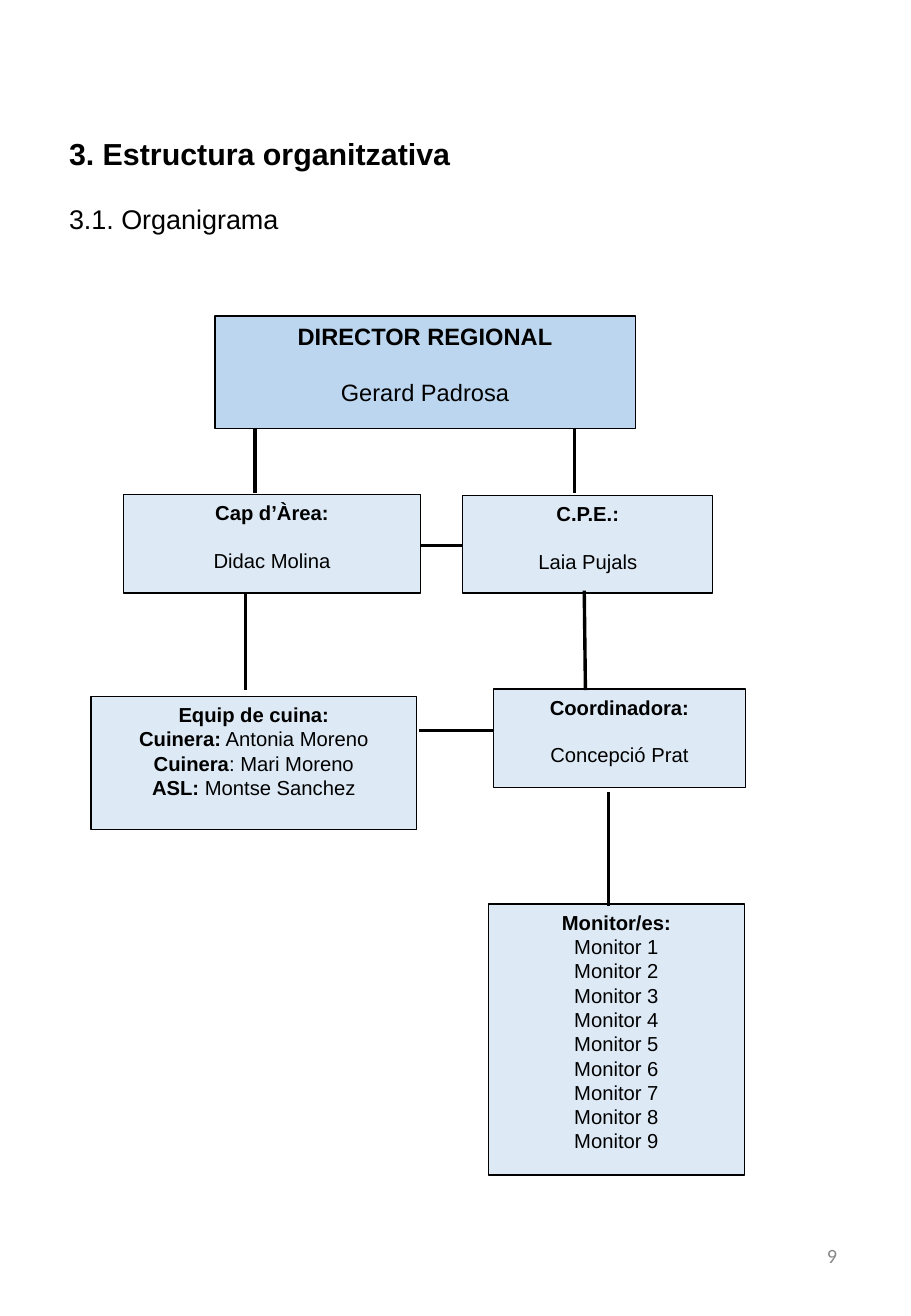
from dataclasses import dataclass

import lxml.etree
import pptx
import pptx.dml.color
import pptx.enum.shapes
import pptx.enum.text
import pptx.oxml.ns
import pptx.shapes.base
import pptx.slide
import pptx.text.text
import pptx.util

Inches = pptx.util.Inches
Align = pptx.enum.text.PP_ALIGN
Anchor = pptx.enum.text.MSO_ANCHOR


@dataclass(frozen=True)
class Theme:
    ink: str = "000000"
    page_number: str = "888888"
    director_fill: str = "BBD6EE"
    role_fill: str = "DDEAF6"
    font: str = "Arial"
    number_font: str = "Calibri"
    heading_size: int = 18
    subheading_size: int = 16
    director_size: int = 14
    role_size: int = 12
    border: float = 0.75
    link: float = 2
    line_height: float = 1.15


THEME = Theme()


@dataclass(frozen=True)
class Line:
    """A paragraph: a bold part, then a regular part."""
    bold: str = ""
    regular: str = ""
    size: int = THEME.role_size
    gap: float = 0
    font: str = THEME.font
    color: str = THEME.ink


@dataclass(frozen=True)
class Area:
    left: float
    top: float
    width: float
    height: float

    def lengths(self) -> tuple[pptx.util.Length, ...]:
        return tuple(map(Inches, (self.left, self.top, self.width, self.height)))


@dataclass(frozen=True)
class Box:
    area: Area
    lines: tuple[Line, ...]
    fill: str = THEME.role_fill


@dataclass(frozen=True)
class Link:
    start: tuple[float, float]
    end: tuple[float, float]
    width: float = THEME.link


def person(role: str, name: str, size: int = THEME.role_size) -> tuple[Line, ...]:
    """A role in bold and, one empty line below, the name."""
    return Line(role, size=size), Line(regular=name, size=size, gap=size * THEME.line_height)


BOXES = (
    Box(Area(1.77, 2.6, 3.46, 0.93),
        person("DIRECTOR REGIONAL", "Gerard Padrosa", THEME.director_size), THEME.director_fill),
    Box(Area(1.02, 4.07, 2.44, 0.81), person("Cap d’Àrea:", "Didac Molina")),
    Box(Area(3.81, 4.08, 2.06, 0.8), person("C.P.E.:", "Laia Pujals")),
    Box(Area(0.75, 5.73, 2.68, 1.1), (
        Line("Equip de cuina:"),
        Line("Cuinera:", " Antonia Moreno"),
        Line("Cuinera", ": Mari Moreno"),
        Line("ASL: ", "Montse Sanchez"),
    )),
    Box(Area(4.06, 5.67, 2.08, 0.81), person("Coordinadora:", "Concepció Prat")),
    Box(Area(4.02, 7.44, 2.11, 2.23), (
        Line("Monitor/es:"),
        *(Line(regular=f"Monitor {number}") for number in range(1, 10)),
    )),
)

LINKS = (
    Link((2.1, 3.53), (2.1, 4.06)),
    Link((4.73, 3.53), (4.73, 4.06)),
    Link((3.46, 4.49), (3.81, 4.49), 1.75),
    Link((2.02, 4.88), (2.02, 5.68)),
    Link((4.81, 4.86), (4.82, 5.68)),
    Link((3.45, 6.01), (4.06, 6.01)),
    Link((5.01, 6.52), (5.01, 7.46)),
)

HEADING = (
    Line("3. Estructura organitzativa", size=THEME.heading_size),
    Line(regular="3.1. Organigrama", size=THEME.subheading_size,
         gap=THEME.subheading_size * THEME.line_height),
)
PAGE_NUMBER = (Line(regular="9", font=THEME.number_font, color=THEME.page_number),)


def rgb(color: str) -> pptx.dml.color.RGBColor:
    return pptx.dml.color.RGBColor.from_string(color)


def write_lines(frame: pptx.text.text.TextFrame, lines: tuple[Line, ...],
                alignment: Align, anchor: Anchor = Anchor.TOP) -> None:
    frame.word_wrap = True
    frame.vertical_anchor = anchor
    for index, line in enumerate(lines):
        paragraph = frame.add_paragraph() if index else frame.paragraphs[0]
        paragraph.alignment = alignment
        if line.gap:
            paragraph.space_before = pptx.util.Pt(line.gap)
        paragraph.font.name = line.font
        paragraph.font.size = pptx.util.Pt(line.size)
        paragraph.font.color.rgb = rgb(line.color)
        mixed = bool(line.bold and line.regular)
        if not mixed:
            paragraph.font.bold = bool(line.bold)
        for text, bold in ((line.bold, True), (line.regular, False)):
            if text:
                run = paragraph.add_run()
                run.text = text
                if mixed:
                    run.font.bold = bold


def add_text(slide: pptx.slide.Slide, area: Area, lines: tuple[Line, ...],
             alignment: Align, anchor: Anchor = Anchor.TOP) -> None:
    shape = slide.shapes.add_textbox(*area.lengths())
    write_lines(shape.text_frame, lines, alignment, anchor)


def add_box(slide: pptx.slide.Slide, box: Box) -> None:
    shape = slide.shapes.add_shape(
        pptx.enum.shapes.MSO_SHAPE.RECTANGLE, *box.area.lengths())
    shape.shadow.inherit = False
    shape.fill.solid()
    shape.fill.fore_color.rgb = rgb(box.fill)
    shape.line.color.rgb = rgb(THEME.ink)
    shape.line.width = pptx.util.Pt(THEME.border)
    write_lines(shape.text_frame, box.lines, Align.CENTER)


def add_link(slide: pptx.slide.Slide, link: Link) -> None:
    connector = slide.shapes.add_connector(
        pptx.enum.shapes.MSO_CONNECTOR.STRAIGHT, *map(Inches, link.start + link.end))
    connector.line.color.rgb = rgb(THEME.ink)
    connector.line.width = pptx.util.Pt(link.width)
    properties = connector.element.find(pptx.oxml.ns.qn("p:spPr"))
    lxml.etree.SubElement(properties, pptx.oxml.ns.qn("a:effectLst"))


def main() -> None:
    presentation = pptx.Presentation()
    presentation.slide_width = Inches(7.5)
    presentation.slide_height = Inches(10.83)
    slide = presentation.slides.add_slide(presentation.slide_layouts[6])
    add_text(slide, Area(0.47, 1.06, 6.54, 0.94), HEADING, Align.LEFT)
    for box in BOXES:
        add_box(slide, box)
    for link in LINKS:
        add_link(slide, link)
    add_text(slide, Area(5.3, 10.04, 1.69, 0.58), PAGE_NUMBER, Align.RIGHT, Anchor.MIDDLE)
    presentation.save("out.pptx")


if __name__ == "__main__":
    main()
